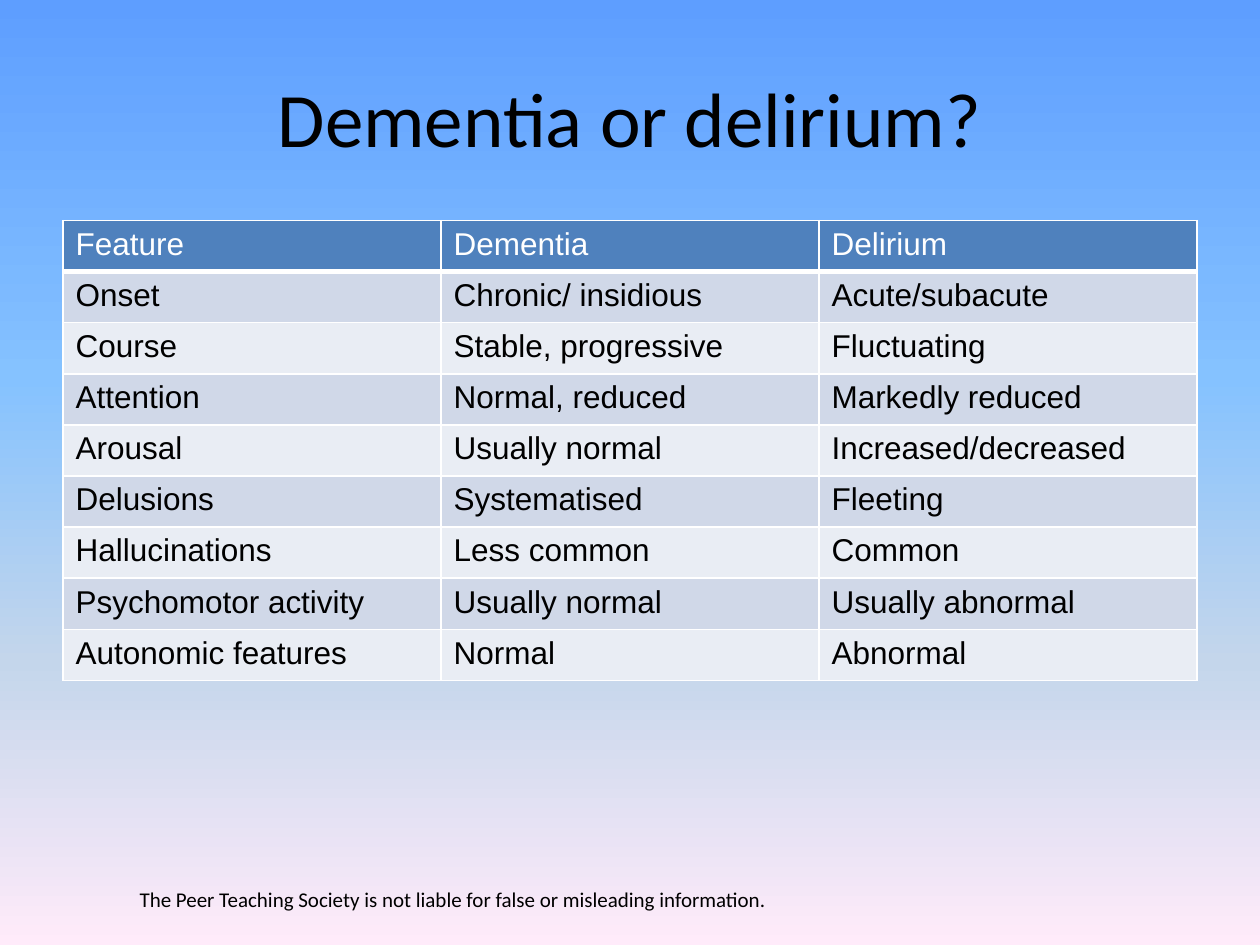
from lxml.etree import SubElement
from pptx import Presentation
from pptx.dml.color import RGBColor
from pptx.enum.text import MSO_ANCHOR, PP_ALIGN
from pptx.oxml.ns import qn
from pptx.util import Pt

BACKGROUND_STOPS = [(0, "5E9EFF"), (40, "85C2FF"), (70, "C4D6EB"), (100, "FFEBFA")]
HEADER_FILL = "4F81BD"
BAND_FILLS = ["E9EDF4", "D0D8E8"]
ROW_HEIGHT = 29.2
COLUMN_WIDTH = 216

FEATURES = [
    ("Feature", "Dementia", "Delirium"),
    ("Onset", "Chronic/ insidious", "Acute/subacute"),
    ("Course", "Stable, progressive", "Fluctuating"),
    ("Attention", "Normal, reduced", "Markedly reduced"),
    ("Arousal", "Usually normal", "Increased/decreased"),
    ("Delusions", "Systematised", "Fleeting"),
    ("Hallucinations", "Less common", "Common"),
    ("Psychomotor activity", "Usually normal", "Usually abnormal"),
    ("Autonomic features", "Normal", "Abnormal"),
]


def color(value):
    return RGBColor.from_string(value)


def format_text(text_frame, size, name, value="000000"):
    for paragraph in text_frame.paragraphs:
        for run in paragraph.runs:
            run.font.size = Pt(size)
            run.font.name = name
            run.font.bold = False
            run.font.color.rgb = color(value)


def set_background(slide):
    fill = slide.background.fill
    fill.gradient()
    fill.gradient_angle = 270  # counter-clockwise, so top to bottom
    stop_list = next(slide.element.iter(qn("a:gsLst")))
    for stop in list(stop_list):
        stop_list.remove(stop)
    for position, value in BACKGROUND_STOPS:
        stop = SubElement(stop_list, qn("a:gs"), pos=str(position * 1000))
        SubElement(stop, qn("a:srgbClr"), val=value)


def add_title(slide, text):
    title = slide.shapes.title
    title.left, title.top, title.width, title.height = Pt(36), Pt(21.6), Pt(648), Pt(90)
    title.text_frame.text = text
    title.text_frame.vertical_anchor = MSO_ANCHOR.MIDDLE
    title.text_frame.paragraphs[0].alignment = PP_ALIGN.CENTER
    format_text(title.text_frame, 44, "Calibri")


def set_borders(cell, bottom_width):
    properties = cell._tc.get_or_add_tcPr()
    for side, width in (("L", 1), ("R", 1), ("T", 1), ("B", bottom_width)):
        line = SubElement(properties, qn(f"a:ln{side}"), w=str(Pt(width)))
        line_fill = SubElement(line, qn("a:solidFill"))
        SubElement(line_fill, qn("a:srgbClr"), val="FFFFFF")


def add_feature_table(slide):
    row_count, column_count = len(FEATURES), len(FEATURES[0])
    table = slide.shapes.add_table(
        row_count, column_count, Pt(36), Pt(126),
        Pt(COLUMN_WIDTH * column_count), Pt(ROW_HEIGHT * row_count)).table
    for row in table.rows:
        row.height = Pt(ROW_HEIGHT)
    for row_index, texts in enumerate(FEATURES):
        is_header = row_index == 0
        for column_index, text in enumerate(texts):
            cell = table.cell(row_index, column_index)
            cell.text_frame.text = text
            format_text(cell.text_frame, 18, "Arial", "FFFFFF" if is_header else "000000")
            set_borders(cell, 3 if is_header else 1)
            cell.fill.solid()
            cell.fill.fore_color.rgb = color(
                HEADER_FILL if is_header else BAND_FILLS[row_index % 2])


def add_disclaimer(slide, text):
    box = slide.shapes.add_textbox(Pt(72.7), Pt(503.3), Pt(398.9), Pt(21.6))
    box.text_frame.word_wrap = True
    box.text_frame.text = text
    format_text(box.text_frame, 12, "Calibri")


def main():
    presentation = Presentation()
    presentation.slide_width, presentation.slide_height = Pt(720), Pt(540)
    slide = presentation.slides.add_slide(presentation.slide_layouts[5])

    # Background and heading
    set_background(slide)
    add_title(slide, "Dementia or delirium?")

    # Comparison and footer
    add_feature_table(slide)
    add_disclaimer(
        slide, "The Peer Teaching Society is not liable for false or misleading information.")
    presentation.save("out.pptx")


if __name__ == "__main__":
    main()
